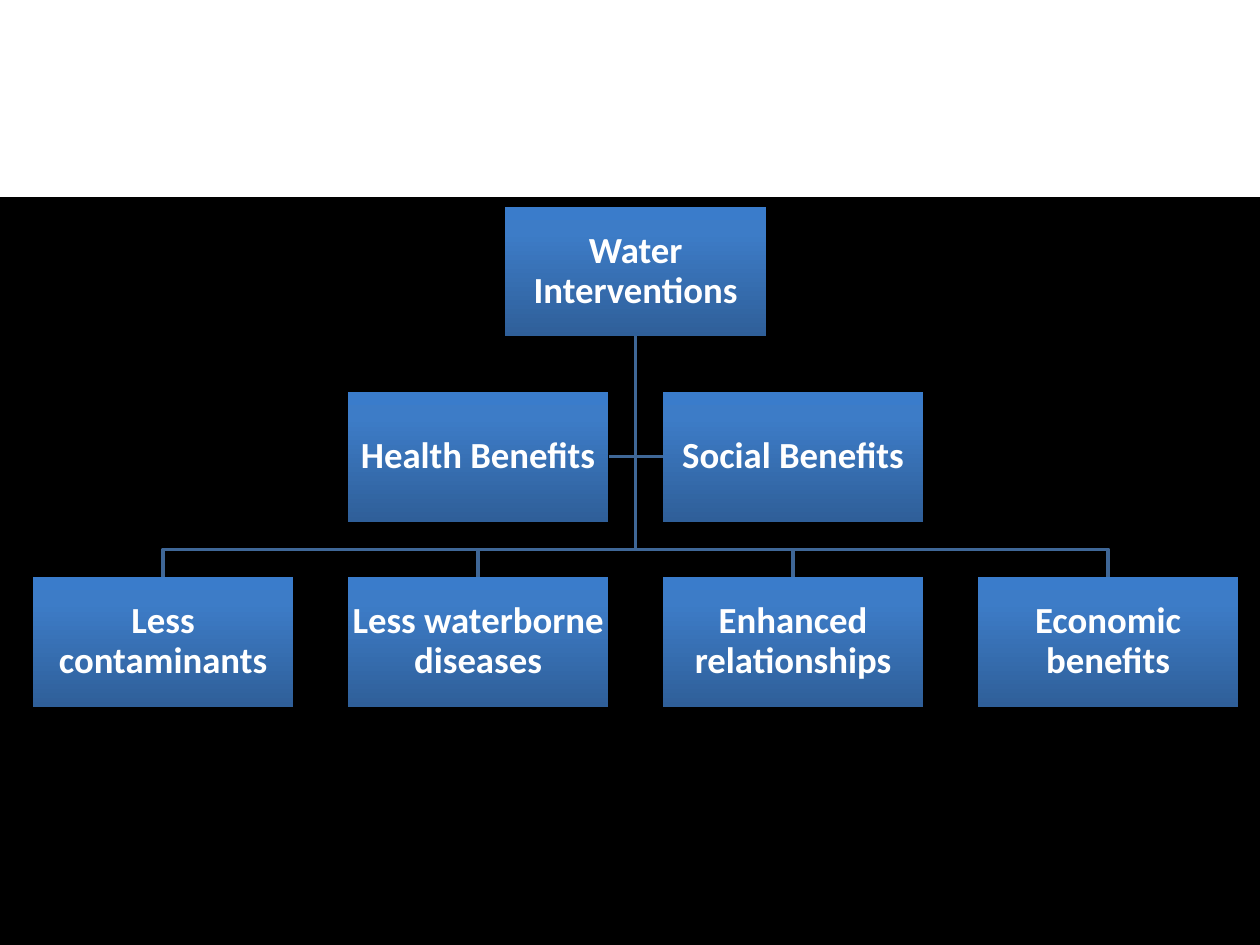
from copy import deepcopy

from pptx import Presentation
from pptx import util as u
from pptx.dml.color import RGBColor
from pptx.enum import shapes, text

COLORS = {
    "black": "000000",
    "white": "FFFFFF",
    "line": "3F6797",
    "box_bottom": "2F5F99",
    "box_middle": "3D7CC7",
    "box_top": "3A7CCB",
}
FONT = "Calibri"

# Grid of the chart, in inches
BOX_WIDTH, BOX_HEIGHT = 2.07, 1.03
LEFT, COLUMN_STEP = 0.26, 2.5
TOP, ROW_STEP = 1.64, 1.47
ROOT_COLUMN = 1.5

# Label, column, row
ROOT = ("Water Interventions", ROOT_COLUMN, 0)
OUTCOMES = [
    ("Less contaminants", 0, 2),
    ("Less waterborne diseases", 1, 2),
    ("Enhanced relationships", 2, 2),
    ("Economic benefits", 3, 2),
]
BENEFITS = [("Health Benefits", 1, 1), ("Social Benefits", 2, 1)]


def color(name):
    return RGBColor.from_string(COLORS[name])


def box_position(column, row):
    return LEFT + column * COLUMN_STEP, TOP + row * ROW_STEP


def add_panel(slide):
    panel = slide.shapes.add_shape(
        shapes.MSO_SHAPE.RECTANGLE,
        u.Inches(0), u.Inches(1.58), u.Inches(10), u.Inches(5.92))
    panel.shadow.inherit = False
    panel.fill.solid()
    panel.fill.fore_color.rgb = color("black")
    panel.line.color.rgb = color("black")
    panel.line.width = u.Pt(2)


def add_branch(slide, points):
    """Draw an open line through points given in inches."""
    points = [(u.Inches(x), u.Inches(y)) for x, y in points]
    builder = slide.shapes.build_freeform(*points[0])
    builder.add_line_segments(points[1:], close=False)
    branch = builder.convert_to_shape()
    branch.shadow.inherit = False
    branch.fill.background()
    branch.line.color.rgb = color("line")
    branch.line.width = u.Pt(2)


def fill_gradient(shape):
    shape.fill.gradient()
    shape.fill.gradient_angle = 90
    stop_list = shape.element.spPr.find(".//{*}gsLst")
    stop_list.append(deepcopy(stop_list[-1]))
    stops = [(0, "box_bottom"), (0.8, "box_middle"), (1, "box_top")]
    for stop, (position, name) in zip(shape.fill.gradient_stops, stops):
        stop.position = position
        stop.color.rgb = color(name)


def add_box(slide, label, column, row):
    left, top = box_position(column, row)
    box = slide.shapes.add_shape(
        shapes.MSO_SHAPE.RECTANGLE, u.Inches(left), u.Inches(top),
        u.Inches(BOX_WIDTH), u.Inches(BOX_HEIGHT))
    box.shadow.inherit = False
    box.line.fill.background()
    fill_gradient(box)

    frame = box.text_frame
    frame.word_wrap = True
    frame.vertical_anchor = text.MSO_ANCHOR.MIDDLE
    frame.margin_left = frame.margin_right = u.Inches(0.01)
    frame.margin_top = frame.margin_bottom = u.Inches(0.01)
    paragraph = frame.paragraphs[0]
    paragraph.alignment = text.PP_ALIGN.CENTER
    paragraph.line_spacing = 0.9
    run = paragraph.add_run()
    run.text = label
    run.font.name = FONT
    run.font.size = u.Pt(21)
    run.font.bold = True
    run.font.color.rgb = color("white")


def add_branches(slide):
    root_left, root_top = box_position(ROOT_COLUMN, 0)
    trunk_x = root_left + BOX_WIDTH / 2
    start = (trunk_x, root_top + BOX_HEIGHT)

    # Side branches to the benefits
    for _, column, row in BENEFITS:
        left, top = box_position(column, row)
        side_x = left if left > trunk_x else left + BOX_WIDTH
        middle_y = top + BOX_HEIGHT / 2
        add_branch(slide, [start, (trunk_x, middle_y), (side_x, middle_y)])

    # Branches down to the outcomes
    for _, column, row in OUTCOMES:
        left, top = box_position(column, row)
        center_x = left + BOX_WIDTH / 2
        turn_y = top - (ROW_STEP - BOX_HEIGHT) / 2
        add_branch(slide, [start, (trunk_x, turn_y),
                           (center_x, turn_y), (center_x, top)])


def main():
    presentation = Presentation()
    presentation.slide_width = u.Inches(10)
    presentation.slide_height = u.Inches(7.5)
    slide = presentation.slides.add_slide(presentation.slide_layouts[6])

    # Black panel, then the lines, then the boxes on top
    add_panel(slide)
    add_branches(slide)
    for label, column, row in [ROOT, *OUTCOMES, *BENEFITS]:
        add_box(slide, label, column, row)

    presentation.save("out.pptx")


if __name__ == "__main__":
    main()
